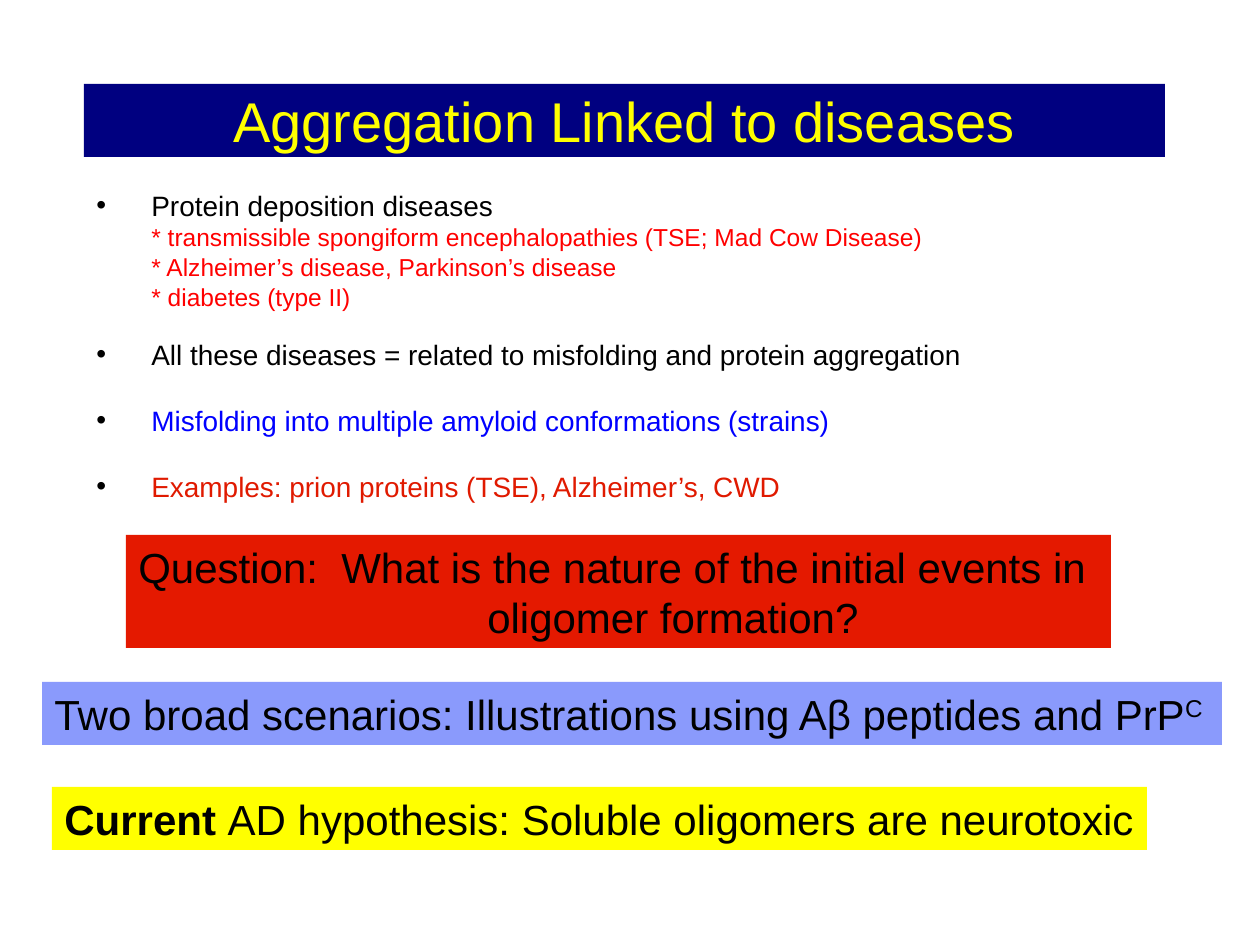
import pptx
import pptx.util
import pptx.dml.color
import pptx.enum.shapes
import pptx.enum.text
import pptx.oxml
import pptx.oxml.ns

COLORS = {
    "navy": "000080",
    "yellow": "FFFF00",
    "black": "000000",
    "red": "FF0000",
    "blue": "0000FF",
    "brick": "E01A00",
    "question": "E41900",
    "scenario": "0025F9",
}
SCALE = 914400 // 126
HANGING = 55


class SlideBuilder:
    def __init__(self, slide, font_name="Arial"):
        self.slide = slide
        self.font_name = font_name

    def format(self, target, values):
        for name, value in values.items():
            setattr(target, name, value)

    def run(self, paragraph, text, size, color="black", bold=False, baseline=None):
        run = paragraph.add_run()
        run.text = text
        self.format(run.font, {
            "name": self.font_name,
            "size": pptx.util.Pt(size),
            "bold": bold,
        })
        run.font.color.rgb = pptx.dml.color.RGBColor.from_string(COLORS[color])
        if baseline:
            run.font._element.set("baseline", str(baseline * 1000))

    def indent(self, paragraph, left, first=0):
        properties = paragraph._p.get_or_add_pPr()
        properties.set("marL", str(left * SCALE))
        properties.set("indent", str(first * SCALE))
        return properties

    def banner(self, box, fill, lines, size=24, alpha=None, centered=False):
        shape = self.slide.shapes.add_shape(
            pptx.enum.shapes.MSO_SHAPE.RECTANGLE, *[length * SCALE for length in box])
        shape.shadow.inherit = False
        shape.line.fill.background()
        shape.fill.solid()
        shape.fill.fore_color.rgb = pptx.dml.color.RGBColor.from_string(COLORS[fill])
        if alpha:
            color = shape.fill._xPr.find(".//" + pptx.oxml.ns.qn("a:srgbClr"))
            color.append(pptx.oxml.parse_xml(
                f'<a:alpha {pptx.oxml.ns.nsdecls("a")} val="{alpha * 1000}"/>'))
        anchor = pptx.enum.text.MSO_ANCHOR
        align = pptx.enum.text.PP_ALIGN
        frame = shape.text_frame
        self.format(frame, {
            "word_wrap": True,
            "margin_right": frame.margin_right if centered else 0,
            "vertical_anchor": anchor.MIDDLE if centered else anchor.TOP,
        })
        for index, (left, runs) in enumerate(lines):
            paragraph = frame.add_paragraph() if index else frame.paragraphs[0]
            paragraph.alignment = align.CENTER if centered else align.LEFT
            self.indent(paragraph, left)
            for text, values in runs:
                self.run(paragraph, text, size, **values)

    def bullet_list(self, box, items):
        shape = self.slide.shapes.add_textbox(*[length * SCALE for length in box])
        frame = shape.text_frame
        frame.word_wrap = True
        for index, (text, size, color, bullet, space) in enumerate(items):
            paragraph = frame.add_paragraph() if index else frame.paragraphs[0]
            self.format(paragraph, {
                "line_spacing": 0.8,
                "space_before": pptx.util.Pt(space),
            })
            properties = self.indent(paragraph, HANGING, -HANGING if bullet else 0)
            if bullet:
                for element in (
                    '<a:buClr {}><a:srgbClr val="' + COLORS["black"] + '"/></a:buClr>',
                    '<a:buFont {} typeface="' + self.font_name + '"/>',
                    '<a:buChar {} char="•"/>',
                ):
                    properties.append(pptx.oxml.parse_xml(
                        element.format(pptx.oxml.ns.nsdecls("a"))))
            self.run(paragraph, text, size, color)


def main():
    presentation = pptx.Presentation()
    presentation.slide_width = pptx.util.Inches(10)
    presentation.slide_height = pptx.util.Inches(7.5)
    builder = SlideBuilder(presentation.slides.add_slide(presentation.slide_layouts[6]))

    builder.banner(
        (84, 84, 1081, 73), "navy",
        [(0, [("Aggregation Linked to diseases", {"color": "yellow"})])],
        size=32, centered=True)
    builder.bullet_list((84, 189, 1092, 378), [
        ("Protein deposition diseases", 16, "black", True, 0),
        ("* transmissible spongiform encephalopathies (TSE; Mad Cow Disease)",
         14, "red", False, 3.5),
        ("* Alzheimer’s disease, Parkinson’s disease", 14, "red", False, 3.5),
        ("* diabetes (type II)", 14, "red", False, 3.5),
        ("All these diseases = related to misfolding and protein aggregation",
         16, "black", True, 19),
        ("Misfolding into multiple amyloid conformations (strains)",
         16, "blue", True, 22.4),
        ("Examples: prion proteins (TSE), Alzheimer’s, CWD", 16, "brick", True, 22.4),
    ])
    builder.banner((126, 535, 985, 113), "question", [
        (0, [("Question:  What is the nature of the initial events in", {})]),
        (349, [("oligomer formation?", {})]),
    ])
    builder.banner((42, 682, 1180, 63), "scenario", [
        (0, [("Two broad scenarios: Illustrations using Aβ peptides and PrP", {}),
             ("C", {"baseline": 30})]),
    ], alpha=46)
    builder.banner((52, 787, 1095, 63), "yellow", [
        (0, [("Current ", {"bold": True}),
             ("AD hypothesis: Soluble oligomers are neurotoxic", {})]),
    ])
    presentation.save("out.pptx")


if __name__ == "__main__":
    main()
